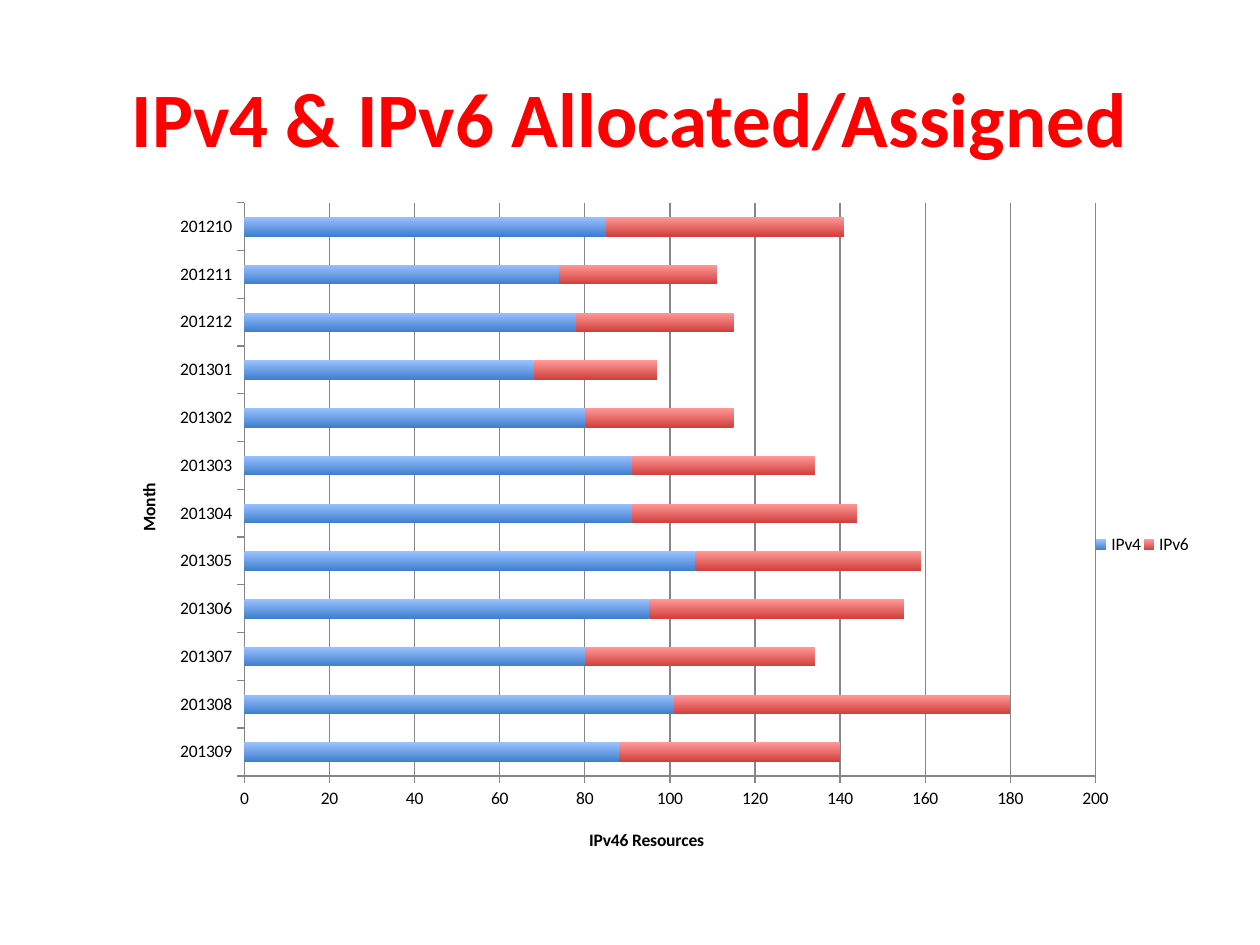
from dataclasses import dataclass

from lxml import etree
from pptx import Presentation
from pptx.chart.data import CategoryChartData
from pptx.dml.color import RGBColor
from pptx.enum.chart import XL_CHART_TYPE as ChartType
from pptx.enum.chart import XL_LEGEND_POSITION as LegendPosition
from pptx.enum.chart import XL_TICK_MARK as TickMark
from pptx.enum.text import MSO_ANCHOR, PP_ALIGN
from pptx.oxml.ns import qn
from pptx.util import Inches, Pt


@dataclass(frozen=True)
class Theme:
    font: str = "Calibri"
    title_size: float = 44
    chart_size: float = 10
    title: str = "FF0000"
    text: str = "000000"
    line: str = "868686"
    # Bar gradients, from top to bottom
    bars: tuple = (("9BC1FF", "3F80CD"), ("FF9A99", "D1403C"))


THEME = Theme()
TITLE_BOX = (0.5, 0.3, 9, 1.25)
CHART_BOX = (0.84, 1.5, 8.66, 5.43)

MONTHS = ["201309", "201308", "201307", "201306", "201305", "201304",
          "201303", "201302", "201301", "201212", "201211", "201210"]
RESOURCES = {
    "IPv4": [88, 101, 80, 95, 106, 91, 91, 80, 68, 78, 74, 85],
    "IPv6": [52, 79, 54, 60, 53, 53, 43, 35, 29, 37, 37, 56],
}


def style_font(font, size, color, bold):
    values = {"name": THEME.font, "size": Pt(size), "bold": bold}
    for name, value in values.items():
        setattr(font, name, value)
    font.color.rgb = RGBColor.from_string(color)


def set_layout(element, index, **values):
    """Place a chart part by fractions of the chart's size."""
    for old in element.findall(qn("c:layout")):
        element.remove(old)
    layout = etree.Element(qn("c:layout"))
    manual = etree.SubElement(layout, qn("c:manualLayout"))
    for name, value in values.items():
        etree.SubElement(manual, qn(f"c:{name}")).set("val", str(value))
    element.insert(index, layout)


def add_title(slide, box, text):
    title = slide.shapes.title
    title.left, title.top, title.width, title.height = map(Inches, box)
    frame = title.text_frame
    frame.text = text
    frame.vertical_anchor = MSO_ANCHOR.MIDDLE
    paragraph = frame.paragraphs[0]
    paragraph.alignment = PP_ALIGN.CENTER
    style_font(paragraph.runs[0].font, THEME.title_size, THEME.title, True)


def style_axis(axis, title, x, y):
    axis.major_tick_mark = TickMark.OUTSIDE
    axis.minor_tick_mark = TickMark.NONE
    axis.format.line.color.rgb = RGBColor.from_string(THEME.line)
    style_font(axis.tick_labels.font, THEME.chart_size, THEME.text, False)
    frame = axis.axis_title.text_frame
    frame.text = title
    style_font(frame.paragraphs[0].runs[0].font,
               THEME.chart_size, THEME.text, True)
    set_layout(axis.axis_title._element, 1,
               xMode="edge", yMode="edge", x=x, y=y)


def add_resource_chart(slide, box):
    data = CategoryChartData()
    data.categories = MONTHS
    for name, values in RESOURCES.items():
        data.add_series(name, values)
    chart = slide.shapes.add_chart(
        ChartType.BAR_STACKED, *map(Inches, box), data).chart
    chart.has_title = False
    style_font(chart.font, THEME.chart_size, THEME.text, False)

    # Bars
    plot = chart.plots[0]
    for name, value in {"gap_width": 150, "overlap": 100,
                        "vary_by_categories": False}.items():
        setattr(plot, name, value)
    for series, colors in zip(plot.series, THEME.bars):
        fill = series.format.fill
        fill.gradient()
        fill.gradient_angle = 270
        for stop, color in zip(fill.gradient_stops, colors):
            stop.color.rgb = RGBColor.from_string(color)
    set_layout(chart._chartSpace.chart.plotArea, 0, layoutTarget="inner",
               xMode="edge", yMode="edge", x=0.127, y=0.02, w=0.78, h=0.838)

    # Axes
    style_axis(chart.category_axis, "Month", 0.026, 0.425)
    value_axis = chart.value_axis
    style_axis(value_axis, "IPv46 Resources", 0.44, 0.93)
    for name, value in {"minimum_scale": 0, "maximum_scale": 200,
                        "major_unit": 20,
                        "has_major_gridlines": True}.items():
        setattr(value_axis, name, value)
    gridline = value_axis.major_gridlines.format.line
    gridline.color.rgb = RGBColor.from_string(THEME.line)

    # Legend
    chart.has_legend = True
    legend = chart.legend
    legend.position = LegendPosition.RIGHT
    legend.include_in_layout = False
    style_font(legend.font, THEME.chart_size, THEME.text, False)
    set_layout(legend._element, 1, xMode="edge", yMode="edge",
               x=0.905, y=0.5, w=0.09, h=0.04)


def main():
    presentation = Presentation()
    presentation.slide_width = Inches(10)
    presentation.slide_height = Inches(7.5)
    slide = presentation.slides.add_slide(presentation.slide_layouts[5])
    add_title(slide, TITLE_BOX, "IPv4 & IPv6 Allocated/Assigned")
    add_resource_chart(slide, CHART_BOX)
    presentation.save("out.pptx")


if __name__ == "__main__":
    main()
